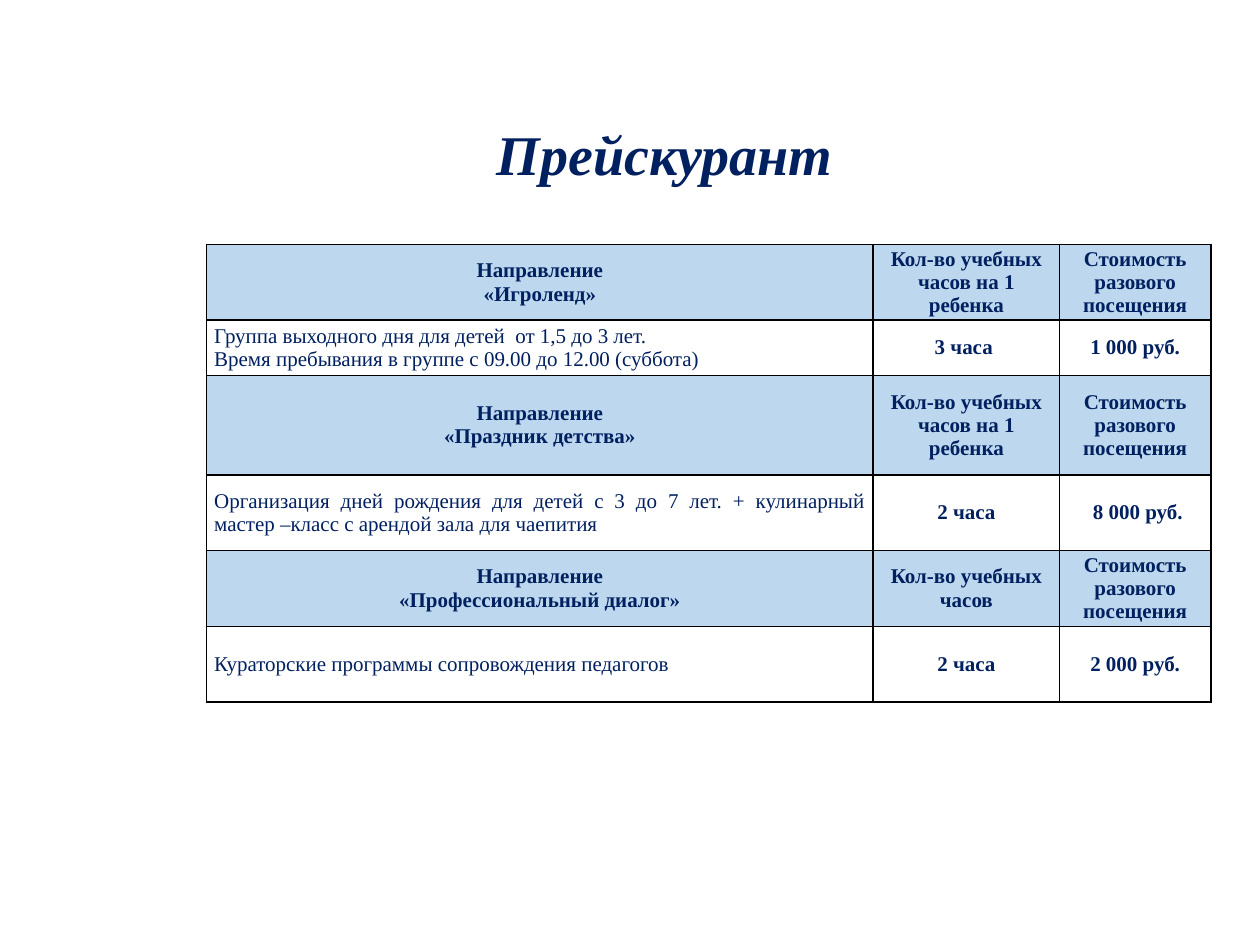
"""Build the price list slide."""
from dataclasses import dataclass

from lxml.etree import SubElement
from pptx import Presentation
from pptx.dml.color import RGBColor
from pptx.enum.text import MSO_ANCHOR, MSO_AUTO_SIZE, PP_ALIGN as Align
from pptx.oxml.ns import qn
from pptx.util import Inches, Pt

COLORS = {"navy": "002060", "header": "BDD7EE", "border": "000000"}
FONT = "Times New Roman"
COLUMN_WIDTHS = (5.29, 1.48, 1.2)
HOURS_PER_CHILD = "Кол-во учебных часов на 1 ребенка"
VISIT_PRICE = "Стоимость\nразового посещения"


@dataclass
class PriceRow:
    height: float
    texts: tuple[str, str, str]
    is_header: bool = False
    first_align: Align = Align.CENTER


ROWS = [
    PriceRow(0.53, ("Направление\n«Игроленд»", HOURS_PER_CHILD, VISIT_PRICE), True),
    PriceRow(0.44, ("Группа выходного дня для детей  от 1,5 до 3 лет.\n"
                    "Время пребывания в группе с 09.00 до 12.00 (суббота)",
                    "3 часа ", "1 000 руб."), first_align=Align.JUSTIFY),
    PriceRow(0.79, ("Направление\n«Праздник детства»", HOURS_PER_CHILD, VISIT_PRICE), True),
    PriceRow(0.6, ("Организация дней рождения для детей с 3 до 7 лет. + кулинарный "
                   "мастер –класс с арендой зала для чаепития",
                   "2 часа", " 8 000 руб."), first_align=Align.JUSTIFY),
    PriceRow(0.6, ("Направление\n«Профессиональный диалог»",
                   "Кол-во учебных часов", VISIT_PRICE), True),
    PriceRow(0.6, ("Кураторские программы сопровождения педагогов",
                   "2 часа", "2 000 руб."), first_align=Align.LEFT),
]


def format_text(frame, size: float, align: Align, bold: bool, italic: bool = False) -> None:
    for paragraph in frame.paragraphs:
        paragraph.alignment = align
        for run in paragraph.runs:
            font = run.font
            font.name, font.size, font.bold, font.italic = FONT, Pt(size), bold, italic
            font.color.rgb = RGBColor.from_string(COLORS["navy"])


def add_borders(cell) -> None:
    properties = cell._tc.get_or_add_tcPr()
    for position, side in enumerate(("a:lnL", "a:lnR", "a:lnT", "a:lnB")):
        line = SubElement(properties, qn(side), w=str(Pt(1)))
        fill = SubElement(line, qn("a:solidFill"))
        SubElement(fill, qn("a:srgbClr"), val=COLORS["border"])
        properties.insert(position, line)


def fill_cell(cell, text: str, row: PriceRow, is_first: bool) -> None:
    cell.text = text
    cell.vertical_anchor = MSO_ANCHOR.MIDDLE
    cell.margin_left = cell.margin_right = Inches(0.06)
    cell.margin_top = cell.margin_bottom = 0
    if row.is_header:
        cell.fill.solid()
        cell.fill.fore_color.rgb = RGBColor.from_string(COLORS["header"])
    else:
        cell.fill.background()
    add_borders(cell)
    align = row.first_align if is_first else Align.CENTER
    format_text(cell.text_frame, 12, align, row.is_header or not is_first)


def add_price_table(slide) -> None:
    prices = slide.shapes.add_table(
        len(ROWS), len(COLUMN_WIDTHS), Inches(1.64), Inches(1.94),
        Inches(sum(COLUMN_WIDTHS)), Inches(sum(row.height for row in ROWS))).table
    prices.first_row = prices.horz_banding = False
    for column, width in zip(prices.columns, COLUMN_WIDTHS):
        column.width = Inches(width)
    for table_row, row in zip(prices.rows, ROWS):
        table_row.height = Inches(row.height)
        for index, (cell, text) in enumerate(zip(table_row.cells, row.texts)):
            fill_cell(cell, text, row, index == 0)


def add_title(slide) -> None:
    title = slide.shapes.title
    title.left, title.top = Inches(3.83), Inches(0.9)
    title.width, title.height = Inches(2.89), Inches(0.64)
    frame = title.text_frame
    frame.text = "Прейскурант"
    frame.word_wrap = False
    frame.auto_size = MSO_AUTO_SIZE.SHAPE_TO_FIT_TEXT
    frame.vertical_anchor = MSO_ANCHOR.TOP
    format_text(frame, 32, Align.CENTER, True, True)


def main() -> None:
    presentation = Presentation()
    presentation.slide_width, presentation.slide_height = Inches(10), Inches(7.5)
    slide = presentation.slides.add_slide(presentation.slide_layouts[5])
    add_price_table(slide)
    add_title(slide)
    presentation.save("out.pptx")


if __name__ == "__main__":
    main()
